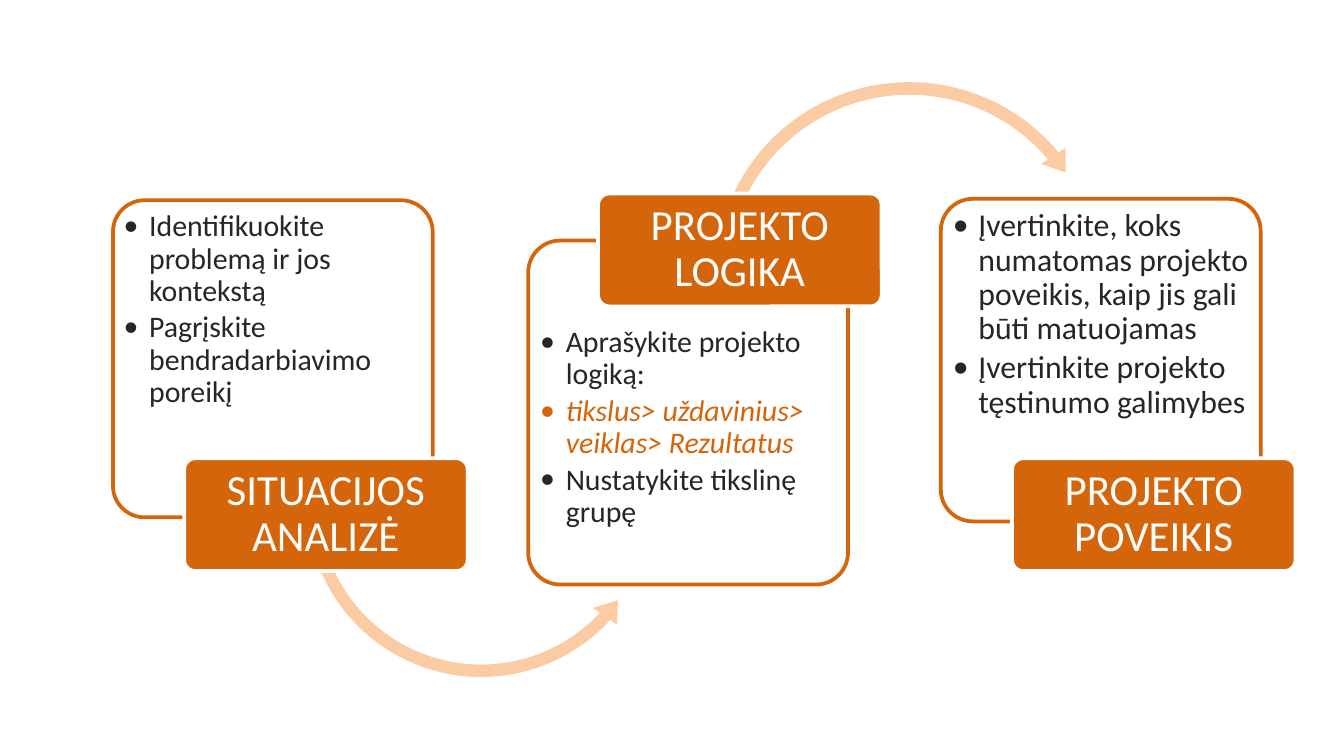
import lxml.etree
import pptx
import pptx.dml.color
import pptx.enum.shapes
import pptx.enum.text
import pptx.oxml.ns
import pptx.util

Inches = pptx.util.Inches
Pt = pptx.util.Pt
RGBColor = pptx.dml.color.RGBColor
ShapeType = pptx.enum.shapes.MSO_SHAPE
Anchor = pptx.enum.text.MSO_ANCHOR
Align = pptx.enum.text.PP_ALIGN

ORANGE = RGBColor(0xD4, 0x65, 0x0A)
PEACH = RGBColor(0xFB, 0xCB, 0xA3)
WHITE = RGBColor(0xFF, 0xFF, 0xFF)
DARK = RGBColor(0x26, 0x26, 0x26)

FONT = "Calibri"
PANEL_WIDTH = 2.38
LABEL_SIZE = (2.11, 0.84)
LABEL_MARGIN = 0.02
HANGING_INDENT = 0.19

# Each step: panel box, list box, list size and margin, list items, label place and text.
# An item is a text and whether it is emphasised.
STEPS = [
    {
        "panel": (0.84, 1.49, PANEL_WIDTH, 2.36),
        "list": (0.89, 1.54, 2.27, 1.75),
        "size": 16,
        "margin": 0.03,
        "items": [
            ("Identifikuokite problemą ir jos kontekstą", False),
            ("Pagrįskite bendradarbiavimo poreikį", False),
        ],
        "label_at": (1.37, 3.41),
        "label": "SITUACIJOS ANALIZĖ",
    },
    {
        "panel": (3.93, 1.79, PANEL_WIDTH, 2.56),
        "list": (3.99, 2.4, 2.26, 1.89),
        "size": 16,
        "margin": 0.03,
        "items": [
            ("Aprašykite projekto logiką:", False),
            ("tikslus> uždavinius> veiklas> Rezultatus", True),
            ("Nustatykite tikslinę grupę", False),
        ],
        "label_at": (4.45, 1.44),
        "label": "PROJEKTO LOGIKA",
    },
    {
        "panel": (7, 1.48, PANEL_WIDTH, 2.4),
        "list": (7.06, 1.53, 2.27, 1.77),
        "size": 17,
        "margin": 0.03,
        "items": [
            ("Įvertinkite, koks numatomas projekto poveikis, "
             "kaip jis gali būti matuojamas", False),
            ("Įvertinkite projekto tęstinumo galimybes", False),
        ],
        "label_at": (7.53, 3.41),
        "label": "PROJEKTO POVEIKIS",
    },
]

# The arrow that leaves each step but the last.
ARROWS = [
    (ShapeType.LEFT_CIRCULAR_ARROW, (2.22, 2.38, 2.72, 2.72),
     (0.034, 4.199, 25.517, 93.808, 0.04)),
    (ShapeType.CIRCULAR_ARROW, (5.26, 0.55, 3.01, 3.01),
     (0.031, 3.771, 192.111, 123.392, 0.036)),
]


def set_attributes(target, values):
    for name, value in values.items():
        setattr(target, name, value)


def add_filled_shape(slide, kind, box, fill, line=None, adjustments=(0.1,)):
    shape = slide.shapes.add_shape(kind, *map(Inches, box))
    shape.shadow.inherit = False
    for index, value in enumerate(adjustments):
        shape.adjustments[index] = value
    shape.fill.solid()
    shape.fill.fore_color.rgb = fill
    if line is None:
        shape.line.fill.background()
    else:
        shape.line.color.rgb = line
        shape.line.width = Pt(2)
    return shape


def set_opacity(shape, percent):
    color = shape.fill._xPr.find(".//" + pptx.oxml.ns.qn("a:srgbClr"))
    alpha = lxml.etree.SubElement(color, pptx.oxml.ns.qn("a:alpha"))
    alpha.set("val", str(percent * 1000))


def add_text_box(slide, box, side_margin, end_margin, anchor):
    text_frame = slide.shapes.add_textbox(*map(Inches, box)).text_frame
    set_attributes(text_frame, {
        "word_wrap": True,
        "vertical_anchor": anchor,
        "margin_left": Inches(side_margin),
        "margin_right": Inches(side_margin),
        "margin_top": Inches(end_margin),
        "margin_bottom": Inches(end_margin),
    })
    return text_frame


def add_bullet(paragraph):
    properties = paragraph._p.get_or_add_pPr()
    properties.set("marL", str(Inches(HANGING_INDENT)))
    properties.set("indent", str(-Inches(HANGING_INDENT)))
    for tag, name, value in (("a:buFont", "typeface", FONT), ("a:buChar", "char", "•")):
        element = lxml.etree.SubElement(properties, pptx.oxml.ns.qn(tag))
        element.set(name, value)


def format_paragraph(paragraph, text, size, color, italic=False, **layout):
    paragraph.text = text
    set_attributes(paragraph, {"line_spacing": 0.9, **layout})
    font = paragraph.runs[0].font
    set_attributes(font, {"name": FONT, "size": Pt(size), "italic": italic})
    font.color.rgb = color


def add_list(slide, box, items, size, margin):
    text_frame = add_text_box(slide, box, margin, margin, Anchor.TOP)
    for index, (text, emphasised) in enumerate(items):
        paragraph = text_frame.add_paragraph() if index else text_frame.paragraphs[0]
        add_bullet(paragraph)
        format_paragraph(paragraph, text, size, ORANGE if emphasised else DARK,
                         italic=emphasised, space_after=Pt(0.15 * size))


def add_label(slide, position, text):
    left, top = position
    width, height = LABEL_SIZE
    add_filled_shape(slide, ShapeType.ROUNDED_RECTANGLE,
                     (left, top, width, height), ORANGE, WHITE)
    text_box = (left + LABEL_MARGIN, top + LABEL_MARGIN,
                width - 2 * LABEL_MARGIN, height - 2 * LABEL_MARGIN)
    text_frame = add_text_box(slide, text_box, 0.05, 0.03, Anchor.MIDDLE)
    format_paragraph(text_frame.paragraphs[0], text, 23, WHITE, alignment=Align.CENTER)


def add_step(slide, step, arrow):
    panel = add_filled_shape(slide, ShapeType.ROUNDED_RECTANGLE,
                             step["panel"], WHITE, ORANGE)
    set_opacity(panel, 90)
    add_list(slide, step["list"], step["items"], step["size"], step["margin"])
    if arrow:
        kind, box, adjustments = arrow
        add_filled_shape(slide, kind, box, PEACH, adjustments=adjustments)
    add_label(slide, step["label_at"], step["label"])


def main():
    presentation = pptx.Presentation()
    presentation.slide_width = Inches(10)
    presentation.slide_height = Inches(10 * 9 / 16)
    slide = presentation.slides.add_slide(presentation.slide_layouts[6])
    for step, arrow in zip(STEPS, ARROWS + [None]):
        add_step(slide, step, arrow)
    presentation.save("out.pptx")


if __name__ == "__main__":
    main()
